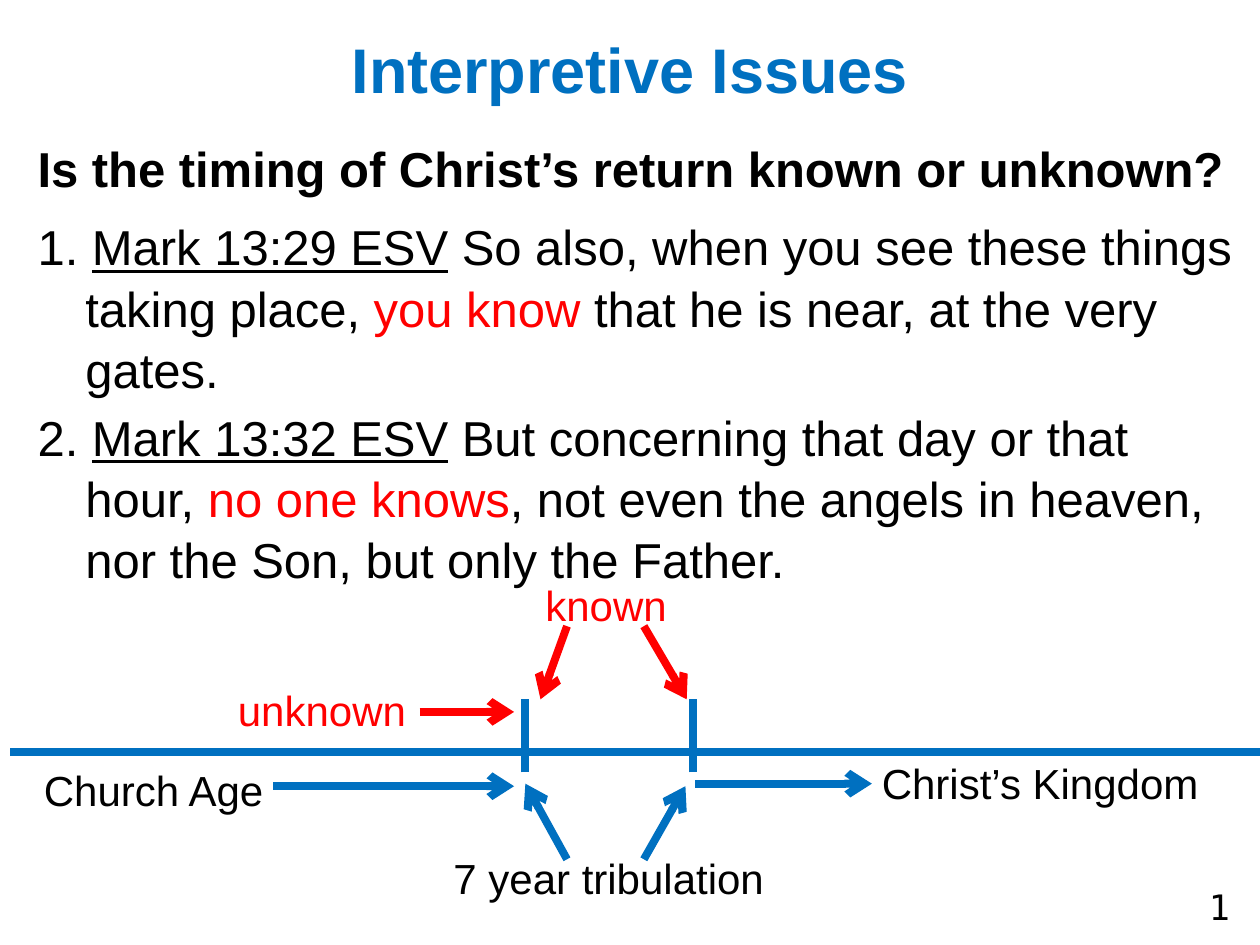
from lxml.etree import SubElement
from pptx import Presentation
from pptx.dml.color import RGBColor
from pptx.enum.shapes import MSO_CONNECTOR
from pptx.enum.text import MSO_ANCHOR, PP_ALIGN
from pptx.oxml.ns import qn
from pptx.util import Inches, Pt

BLUE, RED, BLACK = "0070C0", "FF0000", "000000"


def color(value):
    return RGBColor.from_string(value)


def add_span(para, text, size=24, ink=BLACK, font="Arial", bold=False, underline=False):
    span = para.add_run()
    span.text = text
    span.font.name = font
    span.font.size = Pt(size)
    span.font.bold = bold
    span.font.underline = underline
    span.font.color.rgb = color(ink)


def add_box(page, left, top, width, height, anchor=MSO_ANCHOR.TOP):
    """Add an empty wrapping text box and return its text frame."""
    box = page.shapes.add_textbox(Inches(left), Inches(top), Inches(width), Inches(height))
    frame = box.text_frame
    frame.word_wrap = True
    frame.vertical_anchor = anchor
    return frame


def add_text(page, text, place, align=PP_ALIGN.LEFT, anchor=MSO_ANCHOR.TOP, **style):
    para = add_box(page, *place, anchor=anchor).paragraphs[0]
    para.alignment = align
    add_span(para, text, **style)


def add_line(page, start, end, ink=BLUE, arrow=False):
    line = page.shapes.add_connector(
        MSO_CONNECTOR.STRAIGHT, *(Inches(value) for value in (*start, *end)))
    line.line.color.rgb = color(ink)
    line.line.width = Pt(4.5)
    if arrow:
        SubElement(line.line._get_or_add_ln(), qn("a:tailEnd"), type="arrow")
    SubElement(line._element.spPr, qn("a:effectLst"))


def set_indent(para, margin, first):
    properties = para._p.get_or_add_pPr()
    properties.set("marL", str(Inches(margin)))
    properties.set("indent", str(Inches(first)))


def add_body(page):
    frame = add_box(page, 0.08, 1.03, 9.83, 3.6)
    question = frame.paragraphs[0]
    set_indent(question, 0.12, 0)
    question.line_spacing = 1.04
    question.space_after = Pt(6)
    add_span(question, "Is the timing of Christ’s return known or unknown?", size=28, bold=True)

    verses = [
        ("Mark 13:29 ESV", " So also, when you see these things taking place, ",
         "you know ", "that he is near, at the very gates."),
        ("Mark 13:32 ESV", " But concerning that day or that hour, ",
         "no one knows", ", not even the angels in heaven, nor the Son, but only the Father."),
    ]
    for number, (reference, opening, key, ending) in enumerate(verses, 1):
        para = frame.add_paragraph()
        set_indent(para, 0.5, -0.38)
        para.line_spacing = 1.04
        para.space_before = Pt(4)
        add_span(para, f"{number}. ", size=28)
        add_span(para, reference, size=28, underline=True)
        add_span(para, opening, size=28)
        add_span(para, key, size=28, ink=RED)
        add_span(para, ending, size=28)


def add_timeline(page):
    add_line(page, (0.08, 5.97), (10, 5.97))
    for x in (4.17, 5.5):
        add_line(page, (x, 6.13), (x, 5.55))

    labels = [
        ("Church Age", 0.25, 6.02, 3.08, BLACK),
        ("unknown", 1.79, 5.38, 1.67, RED),
        ("Christ’s Kingdom", 6.9, 5.96, 3.08, BLACK),
        ("7 year tribulation", 3.5, 6.72, 3.08, BLACK),
        ("known", 4.23, 4.55, 1.19, RED),
    ]
    for text, left, top, width, ink in labels:
        add_text(page, text, (left, top, width, 0.5), ink=ink)

    arrows = [
        ((2.17, 6.24), (4.08, 6.24), BLUE),
        ((3.33, 5.65), (4.08, 5.65), RED),
        ((5.52, 6.22), (6.92, 6.22), BLUE),
        ((5.11, 6.82), (5.44, 6.24), BLUE),
        ((4.5, 6.82), (4.17, 6.22), BLUE),
        ((4.5, 4.97), (4.29, 5.55), RED),
        ((5.11, 4.97), (5.45, 5.55), RED),
    ]
    for start, end, ink in arrows:
        add_line(page, start, end, ink, arrow=True)


def main():
    deck = Presentation()
    deck.slide_width, deck.slide_height = Inches(10), Inches(7.5)
    page = deck.slides.add_slide(deck.slide_layouts[6])
    add_text(page, "Interpretive Issues", (0.5, 0.08, 9, 0.92), align=PP_ALIGN.CENTER,
             anchor=MSO_ANCHOR.MIDDLE, size=36, ink=BLUE, bold=True)
    add_body(page)
    add_timeline(page)
    add_text(page, "1", (9.17, 7.01, 0.69, 0.4), align=PP_ALIGN.RIGHT,
             anchor=MSO_ANCHOR.BOTTOM, size=20, font="DejaVu Sans Mono")
    deck.save("out.pptx")


if __name__ == "__main__":
    main()
